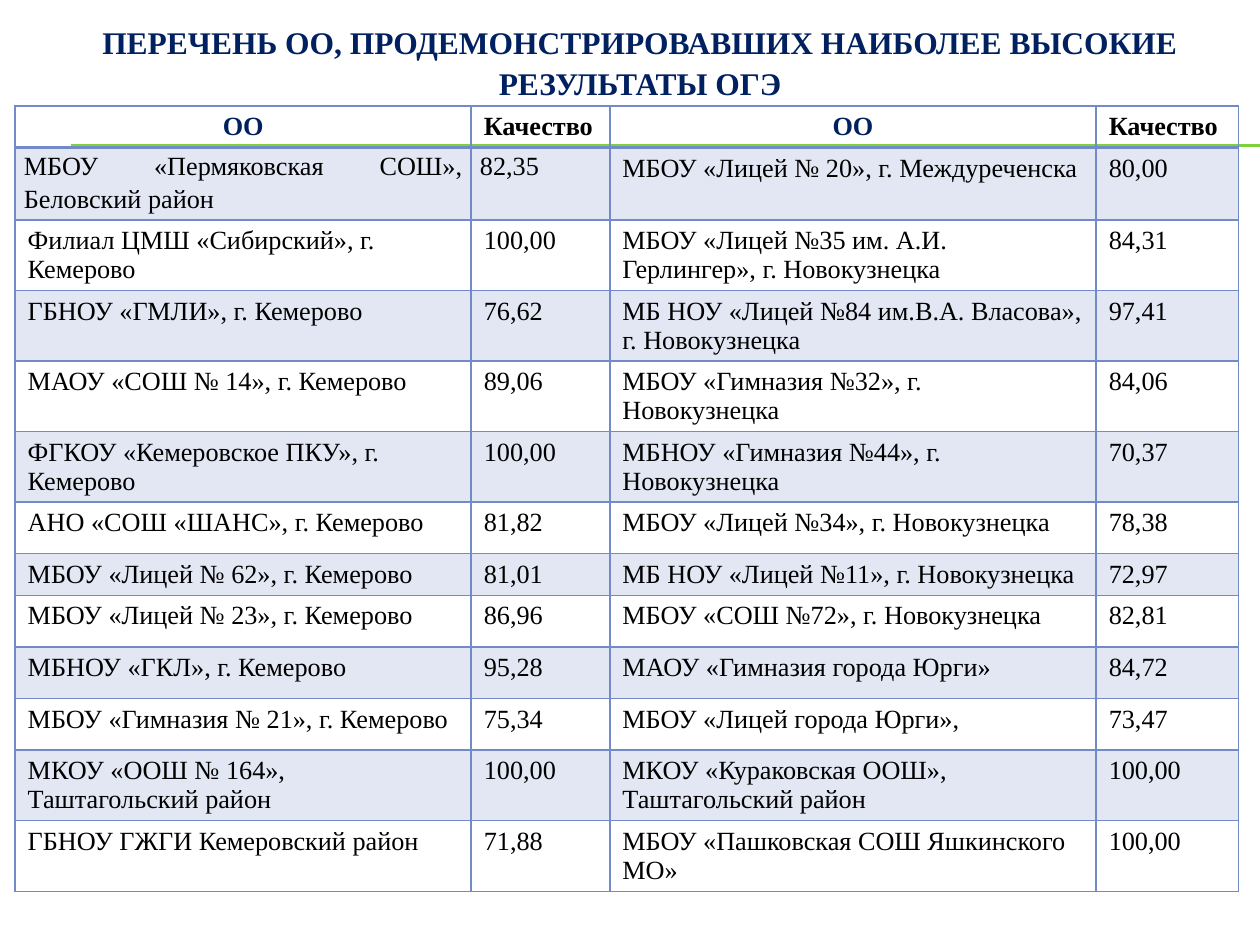
from dataclasses import dataclass
from lxml.etree import SubElement
from pptx import Presentation
from pptx.dml.color import RGBColor
from pptx.enum.shapes import MSO_CONNECTOR as Connector
from pptx.enum.text import MSO_ANCHOR as Anchor, PP_ALIGN as Align
from pptx.oxml.ns import qn
from pptx.util import Inches, Pt


@dataclass(frozen=True)
class Theme:
    font: str = "Times New Roman"
    navy: str = "002060"
    black: str = "000000"
    grid: str = "738AC8"
    green: str = "7FD13B"
    title_size: int = 18
    body_size: int = 15
    band_opacity: int = 20


THEME = Theme()
PAGE_WIDTH, PAGE_HEIGHT = 10, 7.5
COLUMNS = [3.62, 1.1, 3.86, 1.13]
# Row heights: compact, one line, tight pair of lines, two lines
COMPACT, SINGLE, TIGHT, DOUBLE = 0.33, 0.41, 0.52, 0.56
ROWS = [COMPACT, TIGHT, *[DOUBLE] * 4, SINGLE, COMPACT, *[SINGLE] * 3,
        *[DOUBLE] * 2]
TITLE = "ПЕРЕЧЕНЬ ОО, ПРОДЕМОНСТРИРОВАВШИХ НАИБОЛЕЕ ВЫСОКИЕ РЕЗУЛЬТАТЫ ОГЭ"
HEADER = ("ОО", "Качество", "ОО", "Качество")
SCHOOLS = [
    ("МБОУ «Пермяковская СОШ», Беловский район", "82,35",
     "МБОУ «Лицей № 20», г. Междуреченска", "80,00"),
    ("Филиал ЦМШ «Сибирский», г. Кемерово", "100,00",
     "МБОУ «Лицей №35 им. А.И. Герлингер», г. Новокузнецка", "84,31"),
    ("ГБНОУ «ГМЛИ», г. Кемерово", "76,62",
     "МБ НОУ «Лицей №84 им.В.А. Власова», г. Новокузнецка", "97,41"),
    ("МАОУ «СОШ № 14», г. Кемерово", "89,06",
     "МБОУ «Гимназия №32», г. Новокузнецка", "84,06"),
    ("ФГКОУ «Кемеровское ПКУ», г. Кемерово", "100,00",
     "МБНОУ «Гимназия №44», г. Новокузнецка", "70,37"),
    ("АНО «СОШ «ШАНС», г. Кемерово", "81,82",
     "МБОУ «Лицей №34», г. Новокузнецка", "78,38"),
    ("МБОУ «Лицей № 62», г. Кемерово", "81,01",
     "МБ НОУ «Лицей №11», г. Новокузнецка", "72,97"),
    ("МБОУ «Лицей № 23», г. Кемерово", "86,96",
     "МБОУ «СОШ №72», г. Новокузнецка", "82,81"),
    ("МБНОУ «ГКЛ», г. Кемерово", "95,28",
     "МАОУ «Гимназия города Юрги»", "84,72"),
    ("МБОУ «Гимназия № 21», г. Кемерово", "75,34",
     "МБОУ «Лицей города Юрги»,", "73,47"),
    ("МКОУ «ООШ № 164», Таштагольский район", "100,00",
     "МКОУ «Кураковская ООШ», Таштагольский район", "100,00"),
    ("ГБНОУ ГЖГИ Кемеровский район", "71,88",
     "МБОУ «Пашковская СОШ Яшкинского МО»", "100,00"),
]


def set_fonts(props):
    for script in ("latin", "ea", "cs"):
        SubElement(props, qn(f"a:{script}"), typeface=THEME.font)


def write(frame, text, size=THEME.body_size, color=THEME.black, bold=False,
          align=Align.LEFT, spacing=None):
    frame.word_wrap = True
    para = frame.paragraphs[0]
    para.alignment = align
    para.line_spacing = spacing
    span = para.add_run()
    span.text = text
    span.font.size, span.font.bold = Pt(size), bold
    span.font.color.rgb = RGBColor.from_string(color)
    set_fonts(span._r.get_or_add_rPr())
    # The paragraph mark has the same type, so it adds no height
    set_fonts(SubElement(para._p, qn("a:endParaRPr"), sz=str(size * 100)))


def add_rule(page, left, right, top):
    rule = page.shapes.add_connector(
        Connector.STRAIGHT, *map(Inches, (left, top, right, top)))
    rule.line.color.rgb = RGBColor.from_string(THEME.green)
    rule.line.width = Pt(0.75)
    SubElement(rule._element.spPr, qn("a:effectLst"))


def add_title(page, box):
    shape = page.shapes.add_textbox(*map(Inches, box))
    shape.text_frame.vertical_anchor = Anchor.MIDDLE
    write(shape.text_frame, TITLE, size=THEME.title_size, color=THEME.navy,
          bold=True, align=Align.CENTER, spacing=1.08)


def style_cell(cell, banded, bottom_width):
    # Borders come before the fill in the cell properties
    props = cell._tc.get_or_add_tcPr()
    widths = {"lnL": 1, "lnR": 1, "lnT": 1, "lnB": bottom_width}
    for side, width in widths.items():
        border = SubElement(props, qn(f"a:{side}"), w=str(Pt(width)))
        paint = SubElement(border, qn("a:solidFill"))
        SubElement(paint, qn("a:srgbClr"), val=THEME.grid)
    if not banded:
        cell.fill.background()
        return
    cell.fill.solid()
    cell.fill.fore_color.rgb = RGBColor.from_string(THEME.grid)
    tint = props.find(qn("a:solidFill")).find(qn("a:srgbClr"))
    SubElement(tint, qn("a:alpha"), val=str(THEME.band_opacity * 1000))


def add_results(page, box):
    rows = [HEADER, *SCHOOLS]
    table = page.shapes.add_table(
        len(rows), len(COLUMNS), *map(Inches, box)).table
    for column, width in zip(table.columns, COLUMNS):
        column.width = Inches(width)
    for r, values in enumerate(rows):
        table.rows[r].height = Inches(ROWS[r])
        for c, value in enumerate(values):
            cell = table.cell(r, c)
            header, name = r == 0, c % 2 == 0
            style_cell(cell, banded=r % 2 == 1, bottom_width=2 if header else 1)
            cell.margin_bottom = 0
            style = {}
            if header:
                style = {"bold": True}
                if name:
                    style.update(color=THEME.navy, align=Align.CENTER)
            elif r == 1 and c < 2:
                # The first school is set tight and justified
                cell.margin_left = cell.margin_right = Inches(0.07)
                cell.margin_top = 0
                style = {"align": Align.JUSTIFY, "spacing": 1.15}
            write(cell.text_frame, value, **style)


def main():
    deck = Presentation()
    deck.slide_width, deck.slide_height = Inches(PAGE_WIDTH), Inches(PAGE_HEIGHT)
    page = deck.slides.add_slide(deck.slide_layouts[6])
    # Double green rule behind the table
    for top in (1.15, 1.16):
        add_rule(page, 0.56, PAGE_WIDTH, top)
    add_title(page, (0.33, 0.13, 9.5, 0.71))
    add_results(page, (0.12, 0.84, sum(COLUMNS), sum(ROWS)))
    deck.save("out.pptx")


if __name__ == "__main__":
    main()
